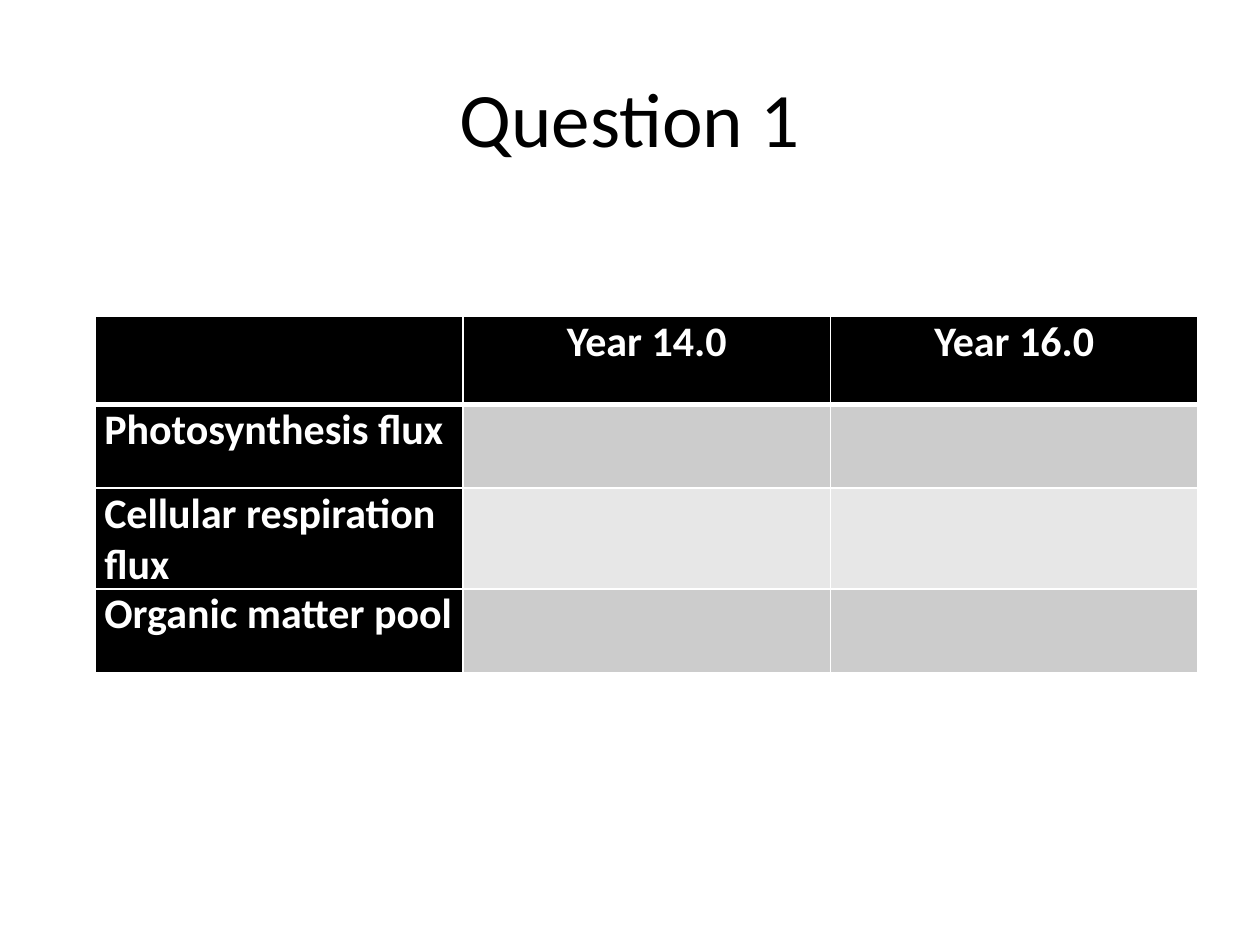
"""Build the Question 1 slide with its table of fluxes and pools."""
from lxml import etree
from pptx import Presentation
from pptx.dml.color import RGBColor
from pptx.enum.text import MSO_ANCHOR, PP_ALIGN
from pptx.oxml.ns import qn
from pptx.util import Pt

CENTER, LEFT = PP_ALIGN.CENTER, PP_ALIGN.LEFT
MIDDLE = MSO_ANCHOR.MIDDLE
BLACK = RGBColor(0x00, 0x00, 0x00)
WHITE = RGBColor(0xFF, 0xFF, 0xFF)
DARK_BAND = RGBColor(0xCC, 0xCC, 0xCC)
LIGHT_BAND = RGBColor(0xE7, 0xE7, 0xE7)
FONT = "Calibri"
ROWS = [
    ["", "Year 14.0", "Year 16.0"],
    ["Photosynthesis flux", "", ""],
    ["Cellular respiration flux", "", ""],
    ["Organic matter pool", "", ""],
]


def style_text(para, size, color, bold, alignment):
    para.alignment = alignment
    for span in para.runs:
        span.font.name = FONT
        span.font.size = Pt(size)
        span.font.bold = bold
        span.font.color.rgb = color


def set_borders(cell, widths):
    properties = cell._tc.get_or_add_tcPr()
    for position, (side, width) in enumerate(widths.items()):
        line = etree.Element(qn(f"a:{side}"), w=str(Pt(width)))
        fill = etree.SubElement(line, qn("a:solidFill"))
        etree.SubElement(fill, qn("a:srgbClr"), val=str(WHITE))
        properties.insert(position, line)


deck = Presentation()
deck.slide_width, deck.slide_height = Pt(720), Pt(540)
page = deck.slides.add_slide(deck.slide_layouts[6])

title_box = page.shapes.add_textbox(Pt(36), Pt(21.6), Pt(648), Pt(90))
title_box.text_frame.word_wrap = True
title_box.text_frame.vertical_anchor = MIDDLE
title_box.text_frame.text = "Question 1"
style_text(title_box.text_frame.paragraphs[0], 44, BLACK, False, CENTER)

table = page.shapes.add_table(
    len(ROWS), len(ROWS[0]), Pt(54.6), Pt(181), Pt(630), Pt(194)
).table
for column in table.columns:
    column.width = Pt(210)
for row_index, labels in enumerate(ROWS):
    table.rows[row_index].height = Pt(50 if row_index == 0 else 48)
    band = DARK_BAND if row_index % 2 else LIGHT_BAND
    for column_index, label in enumerate(labels):
        cell = table.cell(row_index, column_index)
        is_heading = row_index == 0 or column_index == 0
        cell.fill.solid()
        cell.fill.fore_color.rgb = BLACK if is_heading else band
        set_borders(cell, {
            "lnL": 1,
            "lnR": 1,
            "lnT": 3 if row_index == 1 else 1,
            "lnB": 3 if row_index == 0 else 1,
        })
        if label:
            cell.margin_left = cell.margin_right = Pt(5)
            cell.margin_top = cell.margin_bottom = Pt(0)
            cell.text_frame.text = label
            alignment = CENTER if row_index == 0 else LEFT
            style_text(cell.text_frame.paragraphs[0], 24, WHITE, True, alignment)

deck.save("out.pptx")
